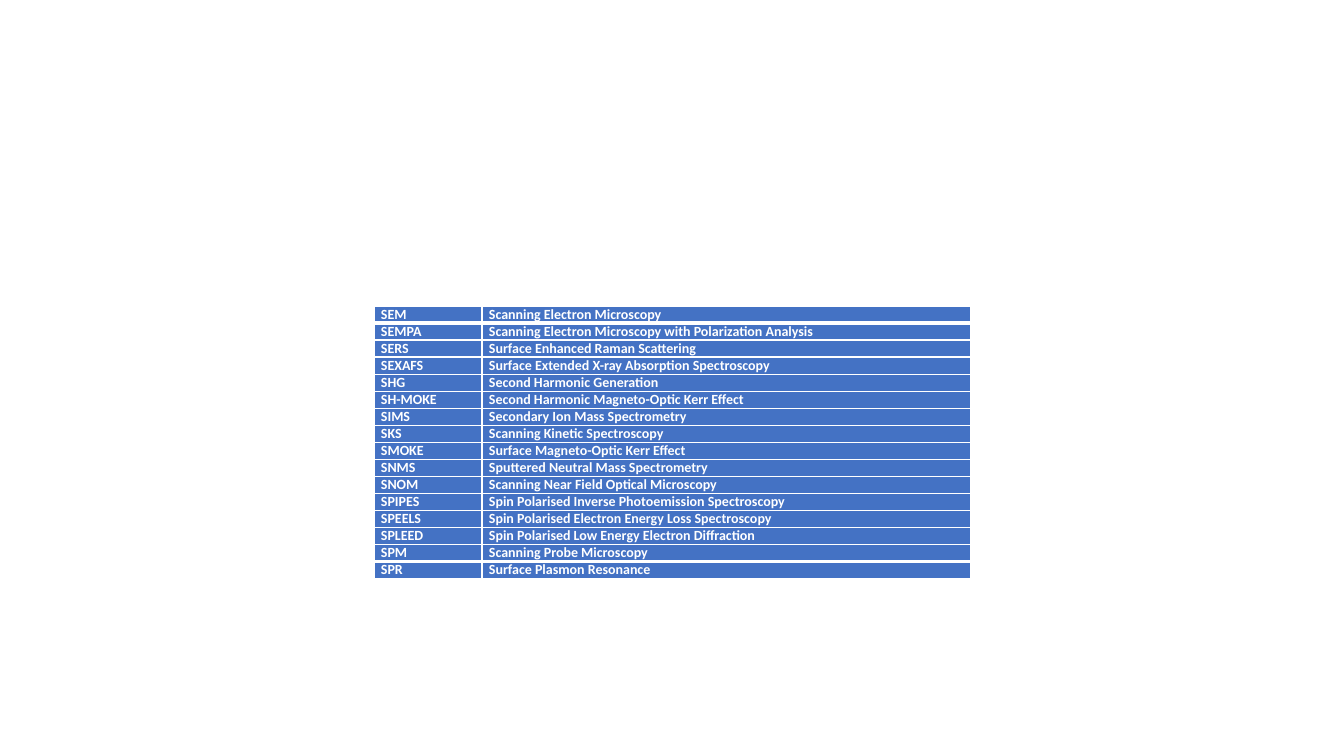
from dataclasses import dataclass
from lxml.etree import SubElement
from pptx import Presentation
from pptx.dml.color import RGBColor as Rgb
from pptx.enum.text import MSO_ANCHOR as Anchor, PP_ALIGN as Align
from pptx.oxml.ns import qn
from pptx.util import Emu, Pt

SCALE = 914400 / 100.8


@dataclass(frozen=True)
class Theme:
    blue: str = "4472C4"
    white: str = "FFFFFF"
    font: str = "Calibri"
    size: int = 10
    thin: int = 1
    thick: int = 3


THEME = Theme()

TERMS = [
    ("SEM", "Scanning Electron Microscopy"),
    ("SEMPA", "Scanning Electron Microscopy with Polarization Analysis"),
    ("SERS", "Surface Enhanced Raman Scattering"),
    ("SEXAFS", "Surface Extended X-ray Absorption Spectroscopy"),
    ("SHG", "Second Harmonic Generation"),
    ("SH-MOKE", "Second Harmonic Magneto-Optic Kerr Effect"),
    ("SIMS", "Secondary Ion Mass Spectrometry"),
    ("SKS", "Scanning Kinetic Spectroscopy"),
    ("SMOKE", "Surface Magneto-Optic Kerr Effect"),
    ("SNMS", "Sputtered Neutral Mass Spectrometry"),
    ("SNOM", "Scanning Near Field Optical Microscopy"),
    ("SPIPES", "Spin Polarised Inverse Photoemission Spectroscopy"),
    ("SPEELS", "Spin Polarised Electron Energy Loss Spectroscopy"),
    ("SPLEED", "Spin Polarised Low Energy Electron Diffraction"),
    ("SPM", "Scanning Probe Microscopy"),
    ("SPR", "Surface Plasmon Resonance"),
]


def px(n):
    return Emu(round(n * SCALE))


def write(frame, text, size=THEME.size, color=THEME.white, bold=True, align=Align.JUSTIFY):
    para = frame.paragraphs[0]
    para.alignment = align
    run = para.add_run()
    run.text = text
    font = run.font
    font.name, font.size, font.bold = THEME.font, Pt(size), bold
    font.color.rgb = Rgb.from_string(color)


def edge(cell, top, base):
    """Draw the cell's borders; top and base are widths in points."""
    props = cell._tc.get_or_add_tcPr()
    sides = {"L": THEME.thin, "R": THEME.thin, "T": top, "B": base}
    for at, (side, width) in enumerate(sides.items()):
        line = SubElement(props, qn(f"a:ln{side}"), w=str(Pt(width)))
        fill = SubElement(line, qn("a:solidFill"))
        SubElement(fill, qn("a:srgbClr"), val=THEME.white)
        props.insert(at, line)  # borders come before the fill


def glossary(slide, x, y, w, h, split):
    """Table of terms; split is the width of the first column."""
    last = len(TERMS) - 1
    table = slide.shapes.add_table(len(TERMS), 2, px(x), px(y), px(w), px(h)).table
    table.first_row = table.horz_banding = False
    for col, width in zip(table.columns, (split, w - split)):
        col.width = px(width)
    for i, term in enumerate(TERMS):
        top = THEME.thick if i in (1, last) else THEME.thin
        base = THEME.thick if i in (0, last - 1) else THEME.thin
        for j, text in enumerate(term):
            cell = table.cell(i, j)
            cell.margin_left = cell.margin_right = px(7)
            cell.margin_top = cell.margin_bottom = 0
            cell.vertical_anchor = Anchor.TOP
            cell.fill.solid()
            cell.fill.fore_color.rgb = Rgb.from_string(THEME.blue)
            edge(cell, top, base)
            write(cell.text_frame, text)


def main():
    deck = Presentation()
    deck.slide_width, deck.slide_height = px(1344), px(756)
    slide = deck.slides.add_slide(deck.slide_layouts[6])
    glossary(slide, 374, 306, 597, 269, split=108)
    deck.save("out.pptx")


if __name__ == "__main__":
    main()
